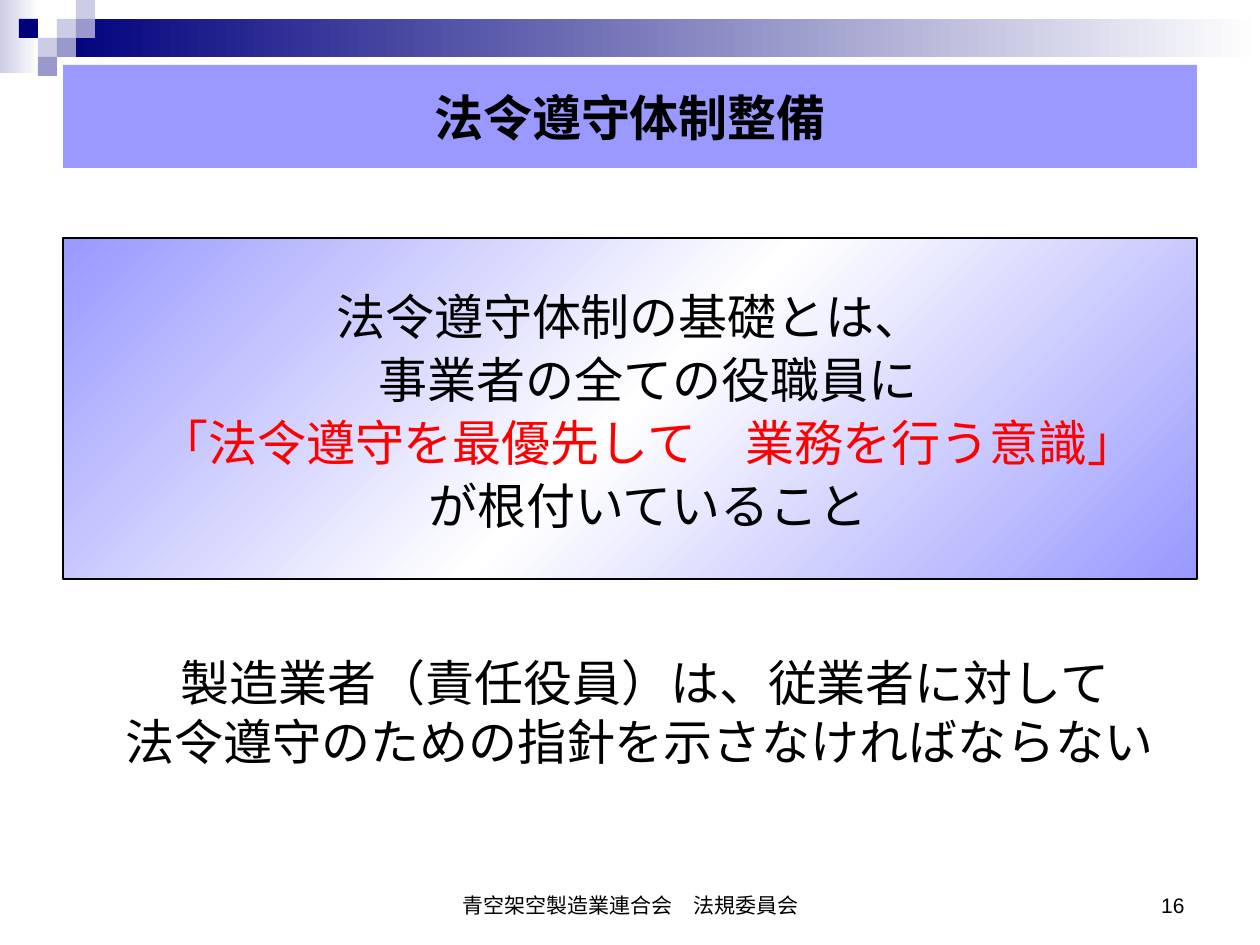
import copy

import pptx
import pptx.dml.color
import pptx.enum.shapes
import pptx.enum.text
import pptx.oxml.ns
import pptx.util

RGBColor = pptx.dml.color.RGBColor
ALIGN = pptx.enum.text.PP_ALIGN
ANCHOR = pptx.enum.text.MSO_ANCHOR
AUTO_SIZE = pptx.enum.text.MSO_AUTO_SIZE

BLACK = RGBColor(0x00, 0x00, 0x00)
WHITE = RGBColor(0xFF, 0xFF, 0xFF)
RED = RGBColor(0xFF, 0x00, 0x00)
NAVY = RGBColor(0x00, 0x00, 0x7D)
PALE = RGBColor(0xCC, 0xCC, 0xE6)
MUTED = RGBColor(0x99, 0x99, 0xCC)
PERIWINKLE = RGBColor(0x99, 0x99, 0xFF)

PX_PER_INCH = 126
CELL = 19
MARGIN = 63
CONTENT_W = 1134
FONT = "Arial"


def px(n):
    return pptx.util.Emu(round(n * 914400 / PX_PER_INCH))


def place(sp, x, y, w, h):
    sp.left, sp.top, sp.width, sp.height = px(x), px(y), px(w), px(h)


def add_rect(slide, x, y, w, h):
    sp = slide.shapes.add_shape(
        pptx.enum.shapes.MSO_SHAPE.RECTANGLE, px(x), px(y), px(w), px(h))
    sp.shadow.inherit = False
    sp.line.fill.background()
    return sp


def fill_solid(sp, color):
    sp.fill.solid()
    sp.fill.fore_color.rgb = color


def fill_gradient(sp, colors, angle=0):
    sp.fill.gradient()
    sp.fill.gradient_angle = angle
    gs = sp.element.findall(".//" + pptx.oxml.ns.qn("a:gs"))
    for _ in colors[2:]:
        gs[0].addnext(copy.deepcopy(gs[0]))
    for i, (stop, color) in enumerate(zip(sp.fill.gradient_stops, colors)):
        stop.position = i / (len(colors) - 1)
        stop.color.rgb = color


def write(tf, lines, size, align, anchor, bold=False):
    tf.word_wrap = True
    tf.auto_size = AUTO_SIZE.NONE
    tf.vertical_anchor = anchor
    for i, line in enumerate(lines):
        p = tf.add_paragraph() if i else tf.paragraphs[0]
        p.text = line
        p.alignment = align
        p.font.name = FONT
        p.font.size = pptx.util.Pt(size)
        p.font.bold = bold
        p.font.color.rgb = BLACK


def add_text(slide, x, y, w, h, lines, size, align, anchor):
    sp = slide.shapes.add_textbox(px(x), px(y), px(w), px(h))
    write(sp.text_frame, lines, size, align, anchor)


def add_decoration(slide):
    fill_gradient(add_rect(slide, 0, 0, 39, 73), [PALE, WHITE])
    fill_gradient(add_rect(slide, 3 * CELL, CELL, 1203, 2 * CELL), [NAVY, WHITE])
    squares = [(3, 1, PALE), (4, 0, PALE), (4, 1, MUTED), (2, 2, PALE),
               (1, 1, NAVY), (3, 2, MUTED), (2, 3, MUTED)]
    for col, row, color in squares:
        sp = add_rect(slide, col * CELL, row * CELL, CELL, CELL)
        fill_solid(sp, color)


def add_title(slide, text):
    sp = slide.shapes.title
    place(sp, MARGIN, 65, CONTENT_W, 103)
    fill_solid(sp, PERIWINKLE)
    write(sp.text_frame, [text], 28, ALIGN.CENTER, ANCHOR.MIDDLE, bold=True)


def add_principle(slide, lines, highlight):
    sp = add_rect(slide, MARGIN, 238, CONTENT_W, 341)
    fill_gradient(sp, [PERIWINKLE, WHITE, PERIWINKLE], 315)
    sp.line.color.rgb = BLACK
    sp.line.width = pptx.util.Pt(1.5)
    write(sp.text_frame, lines, 28, ALIGN.CENTER, ANCHOR.MIDDLE)
    paragraphs = sp.text_frame.paragraphs
    for p in paragraphs:
        p.line_spacing = pptx.util.Pt(36)
    for p in paragraphs[1:]:
        p._p.get_or_add_pPr().set("marL", str(px(36)))
    paragraphs[highlight].font.color.rgb = RED


def main():
    prs = pptx.Presentation()
    prs.slide_width, prs.slide_height = px(1260), px(945)
    slide = prs.slides.add_slide(prs.slide_layouts[5])
    add_decoration(slide)
    add_title(slide, "法令遵守体制整備")
    add_principle(slide, [
        "法令遵守体制の基礎とは、",
        "事業者の全ての役職員に",
        "「法令遵守を最優先して　業務を行う意識」",
        "が根付いていること",
    ], highlight=2)
    add_text(slide, 78, 646, CONTENT_W, 132, [
        "製造業者（責任役員）は、従業者に対して",
        "法令遵守のための指針を示さなければならない ",
    ], 28, ALIGN.CENTER, ANCHOR.TOP)
    add_text(slide, 431, 861, 399, 63, ["青空架空製造業連合会　法規委員会"],
             12, ALIGN.CENTER, ANCHOR.BOTTOM)
    add_text(slide, 903, 861, 294, 63, ["16"], 12, ALIGN.RIGHT, ANCHOR.BOTTOM)
    prs.save("out.pptx")


if __name__ == "__main__":
    main()
